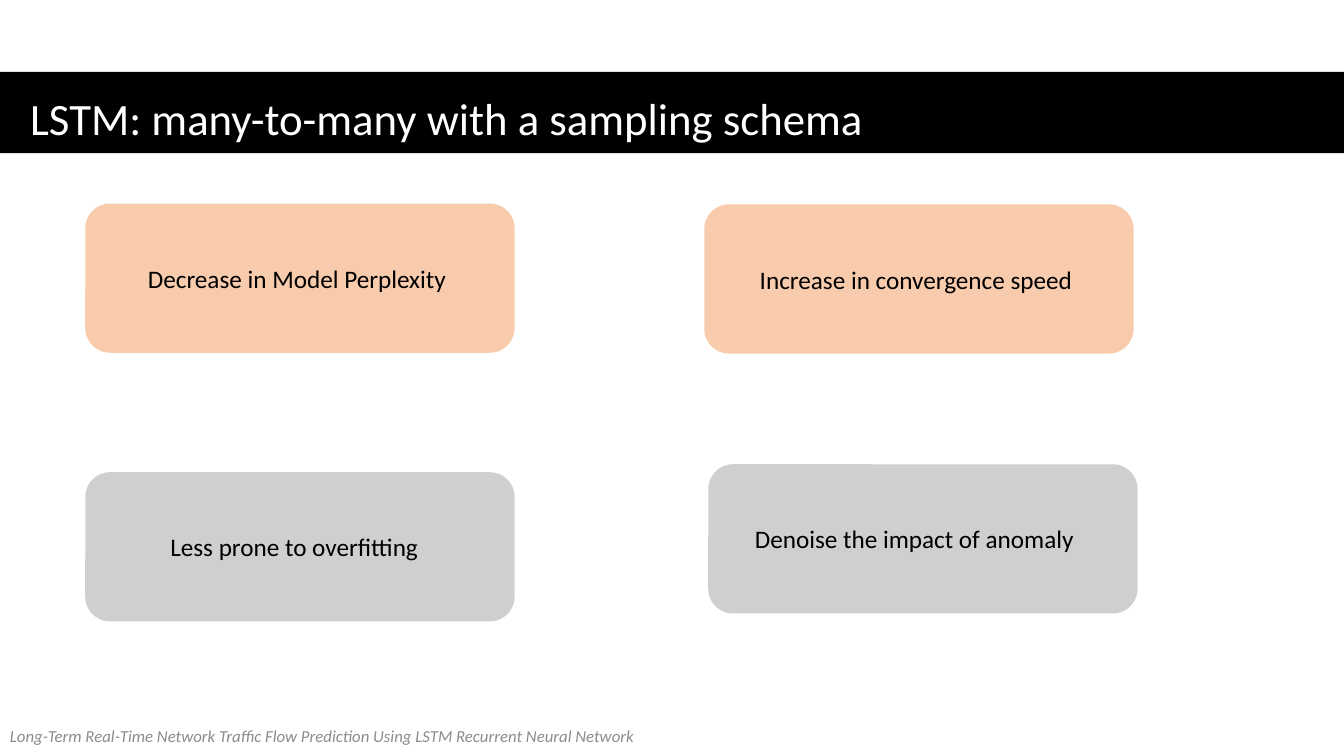
"""Build the slide on LSTM many-to-many sampling benefits."""
from pptx import Presentation
from pptx.dml.color import RGBColor
from pptx.enum.shapes import MSO_SHAPE
from pptx.enum.text import MSO_ANCHOR, MSO_AUTO_SIZE, PP_ALIGN
from pptx.util import Cm, Pt

TITLE = "LSTM: many-to-many with a sampling schema"
FOOTER = ("Long-Term Real-Time Network Traffic Flow Prediction "
          "Using LSTM Recurrent Neural Network")
PEACH, GREY = "F8CBAD", "D0CECE"
CARD_W, CARD_H = 10.82, 3.76
CARDS = [
    ("Decrease in Model Perplexity", 2.15, 5.13, PEACH, 0.4),
    ("Increase in convergence speed", 17.75, 5.15, PEACH, 0.4),
    ("Less prone to overfitting", 2.15, 11.9, GREY, 0.54),
    ("Denoise the impact of anomaly", 17.85, 11.7, GREY, 0.68),
]


def rgb(value):
    """Turn a hex string into a colour."""
    return RGBColor.from_string(value)


def add_block(s, kind, box, fill):
    """Add a plain filled shape at a box given in centimetres."""
    sp = s.shapes.add_shape(kind, *map(Cm, box))
    sp.shadow.inherit = False
    sp.fill.solid()
    sp.fill.fore_color.rgb = rgb(fill)
    sp.line.fill.background()
    return sp


def write(sp, text, size, color, align=PP_ALIGN.LEFT, italic=False):
    """Write one vertically centred paragraph and return it."""
    tf = sp.text_frame
    tf.word_wrap = True
    tf.auto_size = MSO_AUTO_SIZE.NONE
    tf.vertical_anchor = MSO_ANCHOR.MIDDLE
    p = tf.paragraphs[0]
    p.text = text
    p.alignment = align
    p.font.name = "Calibri"
    p.font.size = Pt(size)
    p.font.italic = italic
    p.font.color.rgb = rgb(color)
    return p


def main():
    """Lay out the slide and save it."""
    prs = Presentation()
    prs.slide_width, prs.slide_height = Cm(33.87), Cm(19.05)
    s = prs.slides.add_slide(prs.slide_layouts[5])

    band = add_block(s, MSO_SHAPE.RECTANGLE, (0, 1.81, 33.87, 2.05), "000000")
    title = s.shapes.title
    band.element.addnext(title.element)
    title.left, title.top, title.width, title.height = map(
        Cm, (0, 1.85, 31.14, 2.05))
    p = write(title, TITLE, 32, "FFFFFF")
    p.line_spacing = 0.9
    title.text_frame.margin_left = Cm(0.76)
    title.text_frame.margin_top = Cm(0.48)

    footer = s.shapes.add_textbox(*map(Cm, (0, 18.03, 19.28, 1.02)))
    write(footer, FOOTER, 12, "8C8C8C", italic=True)

    for text, left, top, fill, inset in CARDS:
        card = add_block(s, MSO_SHAPE.ROUNDED_RECTANGLE,
                         (left, top, CARD_W, CARD_H), fill)
        write(card, text, 18, "000000", PP_ALIGN.CENTER)
        card.text_frame.margin_right = Cm(inset)

    prs.save("out.pptx")


if __name__ == "__main__":
    main()
